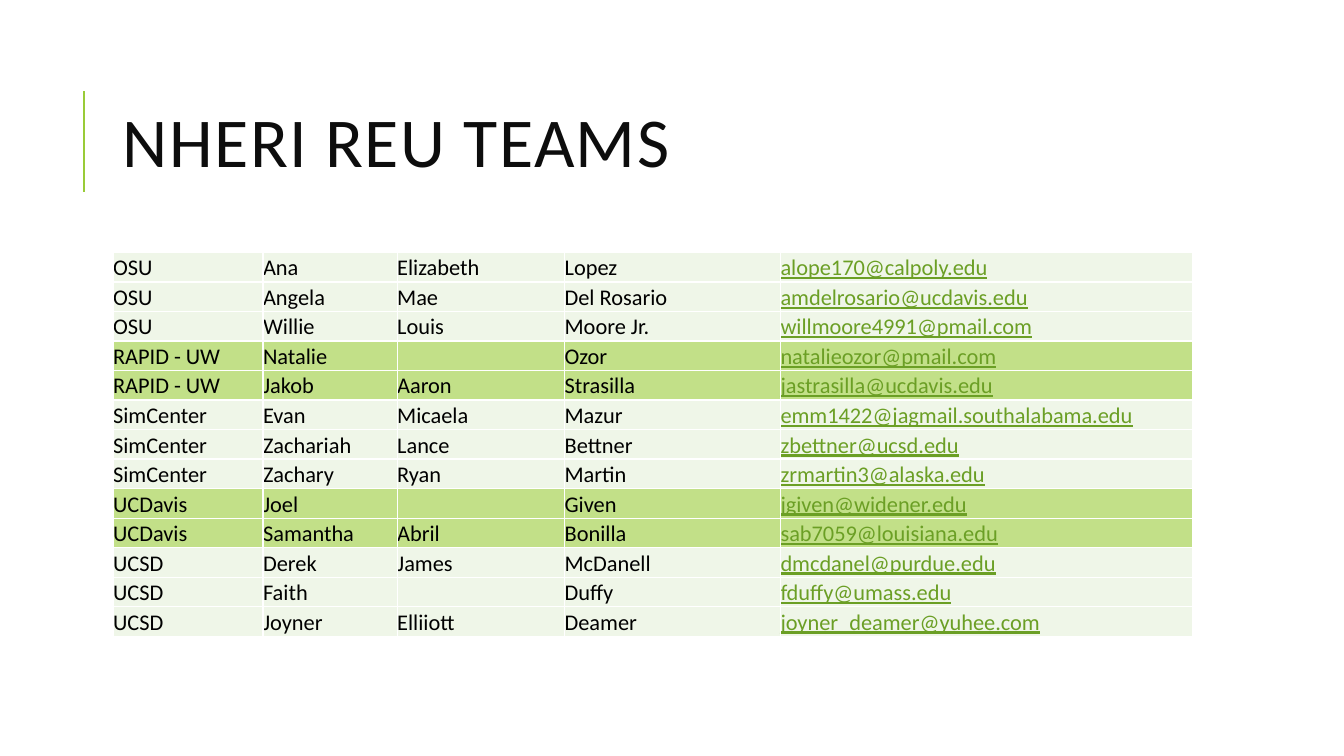
from lxml.etree import SubElement
from pptx import Presentation
from pptx.dml.color import RGBColor
from pptx.enum.shapes import MSO_CONNECTOR as CONN
from pptx.enum.text import MSO_ANCHOR as ANCHOR
from pptx.oxml.ns import qn
from pptx.util import Cm, Pt

WHITE = RGBColor(0xFF, 0xFF, 0xFF)
BLACK = RGBColor(0x00, 0x00, 0x00)
INK = RGBColor(0x0D, 0x0D, 0x0D)
ACCENT = RGBColor(0x99, 0xCB, 0x38)
LINK = RGBColor(0x6B, 0x9F, 0x25)
PALE = RGBColor(0xEF, 0xF6, 0xE8)
GREEN = RGBColor(0xC2, 0xE0, 0x88)

COLUMNS = (3.78, 3.38, 4.22, 5.44, 10.39)
TEAMS = {
    "OSU": [
        ("Ana", "Elizabeth", "Lopez", "alope170@calpoly.edu"),
        ("Angela", "Mae", "Del Rosario", "amdelrosario@ucdavis.edu"),
        ("Willie", "Louis", "Moore Jr.", "willmoore4991@pmail.com"),
    ],
    "RAPID - UW": [
        ("Natalie", "", "Ozor", "natalieozor@pmail.com"),
        ("Jakob", "Aaron", "Strasilla", "jastrasilla@ucdavis.edu"),
    ],
    "SimCenter": [
        ("Evan", "Micaela", "Mazur", "emm1422@jagmail.southalabama.edu"),
        ("Zachariah", "Lance", "Bettner", "zbettner@ucsd.edu"),
        ("Zachary", "Ryan", "Martin", "zrmartin3@alaska.edu"),
    ],
    "UCDavis": [
        ("Joel", "", "Given", "jgiven@widener.edu"),
        ("Samantha", "Abril", "Bonilla", "sab7059@louisiana.edu"),
    ],
    "UCSD": [
        ("Derek", "James", "McDanell", "dmcdanel@purdue.edu"),
        ("Faith", "", "Duffy", "fduffy@umass.edu"),
        ("Joyner", "Elliiott", "Deamer", "joyner_deamer@yuhee.com"),
    ],
}


def write(tf, text, size=16, color=BLACK, font="Calibri", underline=False,
          spacing=None, line_spacing=None):
    """Put formatted text in the first paragraph of a text frame."""
    p = tf.paragraphs[0]
    if line_spacing:
        p.line_spacing = line_spacing
    if not text:
        SubElement(p._p, qn("a:endParaRPr"), sz=str(size * 100))
        return
    r = p.add_run()
    r.text = text
    r.font.size, r.font.name = Pt(size), font
    r.font.color.rgb = color
    if underline:
        r.font.underline = True
    if spacing:
        r.font._element.set("spc", str(spacing * 100))


class Deck:
    """Hold the style and the current slide."""

    def __init__(self, prs):
        """Add a blank slide with a white background."""
        self.s = prs.slides.add_slide(prs.slide_layouts[6])
        self.s.background.fill.solid()
        self.s.background.fill.fore_color.rgb = WHITE

    def line(self, x1, y1, x2, y2, color=ACCENT, width=1.5):
        """Draw a straight line."""
        ln = self.s.shapes.add_connector(
            CONN.STRAIGHT, Cm(x1), Cm(y1), Cm(x2), Cm(y2))
        ln.line.color.rgb = color
        ln.line.width = Pt(width)
        SubElement(ln._element.spPr, qn("a:effectLst"))

    def title(self, text, x, y, w, h):
        """Add the slide title."""
        sp = self.s.shapes.add_textbox(Cm(x), Cm(y), Cm(w), Cm(h))
        tf = sp.text_frame
        tf.word_wrap = True
        tf.vertical_anchor = ANCHOR.MIDDLE
        write(tf, text, size=50, color=INK, spacing=1, line_spacing=0.8)

    def cell(self, cell, text, fill, is_link):
        """Fill one table cell and give it white borders."""
        cell.margin_left = cell.margin_right = 0
        cell.margin_top = cell.margin_bottom = 0
        cell.vertical_anchor = ANCHOR.BOTTOM
        write(cell.text_frame, text, color=LINK if is_link else BLACK,
              underline=is_link)
        tc_pr = cell._tc.get_or_add_tcPr()
        for side in ("lnL", "lnR", "lnT", "lnB"):
            ln = SubElement(tc_pr, qn(f"a:{side}"), w=str(Pt(1)))
            SubElement(SubElement(ln, qn("a:solidFill")), qn("a:srgbClr"),
                       val=str(WHITE))
        cell.fill.solid()
        cell.fill.fore_color.rgb = fill

    def table(self, teams, x, y, widths, height):
        """Add the member table, shading every second team."""
        rows = [((team, *member), GREEN if i % 2 else PALE)
                for i, (team, members) in enumerate(teams.items())
                for member in members]
        tbl = self.s.shapes.add_table(
            len(rows), len(widths), Cm(x), Cm(y), Cm(sum(widths)),
            Cm(height)).table
        tbl.first_row = tbl.horz_banding = False
        for col, width in zip(tbl.columns, widths):
            col.width = Cm(width)
        for i, (values, fill) in enumerate(rows):
            for j, text in enumerate(values):
                self.cell(tbl.cell(i, j), text, fill, j == len(widths) - 1)


def main():
    """Build and save the slide."""
    prs = Presentation()
    prs.slide_width, prs.slide_height = Cm(33.87), Cm(19.05)
    deck = Deck(prs)
    deck.line(2.12, 4.83, 2.12, 2.29)
    deck.title("NHERI REU TEAMS", 2.85, 1.63, 27, 4.16)
    deck.table(TEAMS, 2.85, 6.36, COLUMNS, 9.68)
    prs.save("out.pptx")


if __name__ == "__main__":
    main()
